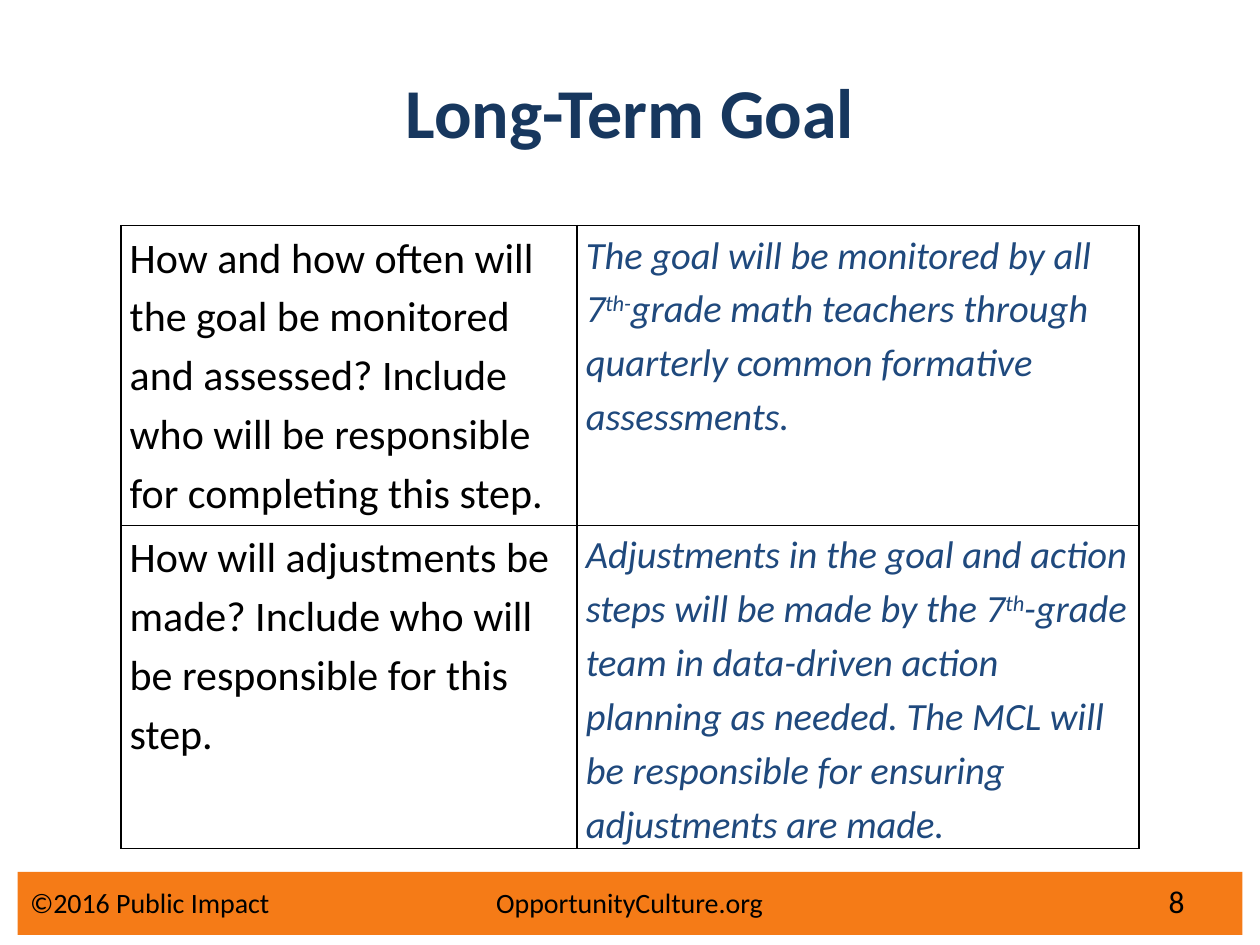
import pptx
import pptx.dml.color
import pptx.enum.shapes
import pptx.enum.text
import pptx.oxml
import pptx.oxml.ns
import pptx.util

Inch = pptx.util.Inches
Pt = pptx.util.Pt
Align = pptx.enum.text.PP_ALIGN
Middle = pptx.enum.text.MSO_ANCHOR.MIDDLE

WIDE, HIGH = 10, 7.5
EDGE = 0.14
COLS = (3.62, 4.46)
ROWS = (2.38, 2.53)
INK, NAVY, BLUE, ORANGE = "000000", "17375E", "1F497D", "F57B17"
ASK = dict(size=Pt(24), color=INK)
REPLY = dict(size=Pt(22), color=BLUE, italic=True)
FOOT = dict(size=Pt(16), color=INK)

# Each cell is a list of runs; every second run is raised
GOALS = [
    (["How and how often will the goal be monitored and assessed? "
      "Include who will be responsible for completing this step."],
     ["The goal will be monitored by all 7", "th-",
      "grade math teachers through quarterly common formative assessments."]),
    (["How will adjustments be made? Include who will be responsible "
      "for this step."],
     ["Adjustments in the goal and action steps will be made by the 7", "th",
      "-grade team in data-driven action planning as needed. The MCL will be "
      "responsible for ensuring adjustments are made."]),
]


def paint(text):
    return pptx.dml.color.RGBColor.from_string(text)


def style(font, form):
    font.name = "Calibri"
    for key, value in form.items():
        if key == "color":
            font.color.rgb = paint(value)
        else:
            setattr(font, key, value)


def place(shape, left, top, width, height):
    spot = dict(left=left, top=top, width=width, height=height)
    for key, value in spot.items():
        setattr(shape, key, Inch(value))


def write(para, runs, form):
    for index, text in enumerate(runs):
        run = para.add_run()
        run.text = text
        style(run.font, form)
        if index % 2:
            run._r.get_or_add_rPr().set("baseline", "30000")


def head(slide, text):
    title = slide.shapes.title
    place(title, 0.05 * WIDE, 0.25, 0.9 * WIDE, 1.25)
    title.text_frame.vertical_anchor = Middle
    para = title.text_frame.paragraphs[0]
    para.alignment = Align.CENTER
    write(para, [text], dict(size=Pt(40), color=NAVY, bold=True))


def band(slide):
    bar = slide.shapes.add_shape(
        pptx.enum.shapes.MSO_SHAPE.RECTANGLE,
        Inch(EDGE), Inch(6.92), Inch(WIDE - 2 * EDGE), Inch(0.5))
    bar.shadow.inherit = False
    bar.fill.solid()
    bar.fill.fore_color.rgb = paint(ORANGE)
    bar.line.fill.background()


def label(slide, spot, text, form, align=Align.LEFT, stop=None):
    box = slide.shapes.add_textbox(*map(Inch, spot))
    frame = box.text_frame
    frame.word_wrap = True
    frame.vertical_anchor = Middle
    para = frame.paragraphs[0]
    para.alignment = align
    if stop:
        para._p.get_or_add_pPr().append(pptx.oxml.parse_xml(
            f'<a:tabLst {pptx.oxml.ns.nsdecls("a")}>'
            f'<a:tab pos="{Inch(stop)}" algn="l"/></a:tabLst>'))
    write(para, [text], form)


def frame(cell):
    # Thin black line on all four sides, no fill
    for side in "LRTB":
        cell._tc.get_or_add_tcPr().append(pptx.oxml.parse_xml(
            f'<a:ln{side} {pptx.oxml.ns.nsdecls("a")} w="{Pt(1)}"><a:solidFill>'
            f'<a:srgbClr val="{INK}"/></a:solidFill></a:ln{side}>'))
    cell.fill.background()


def grid(slide):
    width, height = sum(COLS), sum(ROWS)
    table = slide.shapes.add_table(
        len(ROWS), len(COLS), Inch((WIDE - width) / 2), Inch(1.79),
        Inch(width), Inch(height)).table
    table.first_row = table.horz_banding = False
    for col, size in zip(table.columns, COLS):
        col.width = Inch(size)
    gaps = dict(margin_left=0.07, margin_right=0.07,
                margin_top=0, margin_bottom=0)
    for row, size, goal in zip(table.rows, ROWS, GOALS):
        row.height = Inch(size)
        for cell, runs, form in zip(row.cells, goal, (ASK, REPLY)):
            frame(cell)
            for key, value in gaps.items():
                setattr(cell, key, Inch(value))
            para = cell.text_frame.paragraphs[0]
            para.line_spacing = 1.15
            write(para, runs, form)


def main():
    deck = pptx.Presentation()
    deck.slide_width, deck.slide_height = Inch(WIDE), Inch(HIGH)
    slide = deck.slides.add_slide(deck.slide_layouts[5])
    band(slide)
    head(slide, "Long-Term Goal")
    grid(slide)
    # Footer line and page number
    label(slide, (EDGE, 6.96, 7.53, 0.4),
          "©2016 Public Impact\tOpportunityCulture.org", FOOT, stop=3.7)
    label(slide, (8.83, 6.95, 0.67, 0.4), "8",
          dict(FOOT, size=Pt(18)), Align.RIGHT)
    deck.save("out.pptx")


if __name__ == "__main__":
    main()
